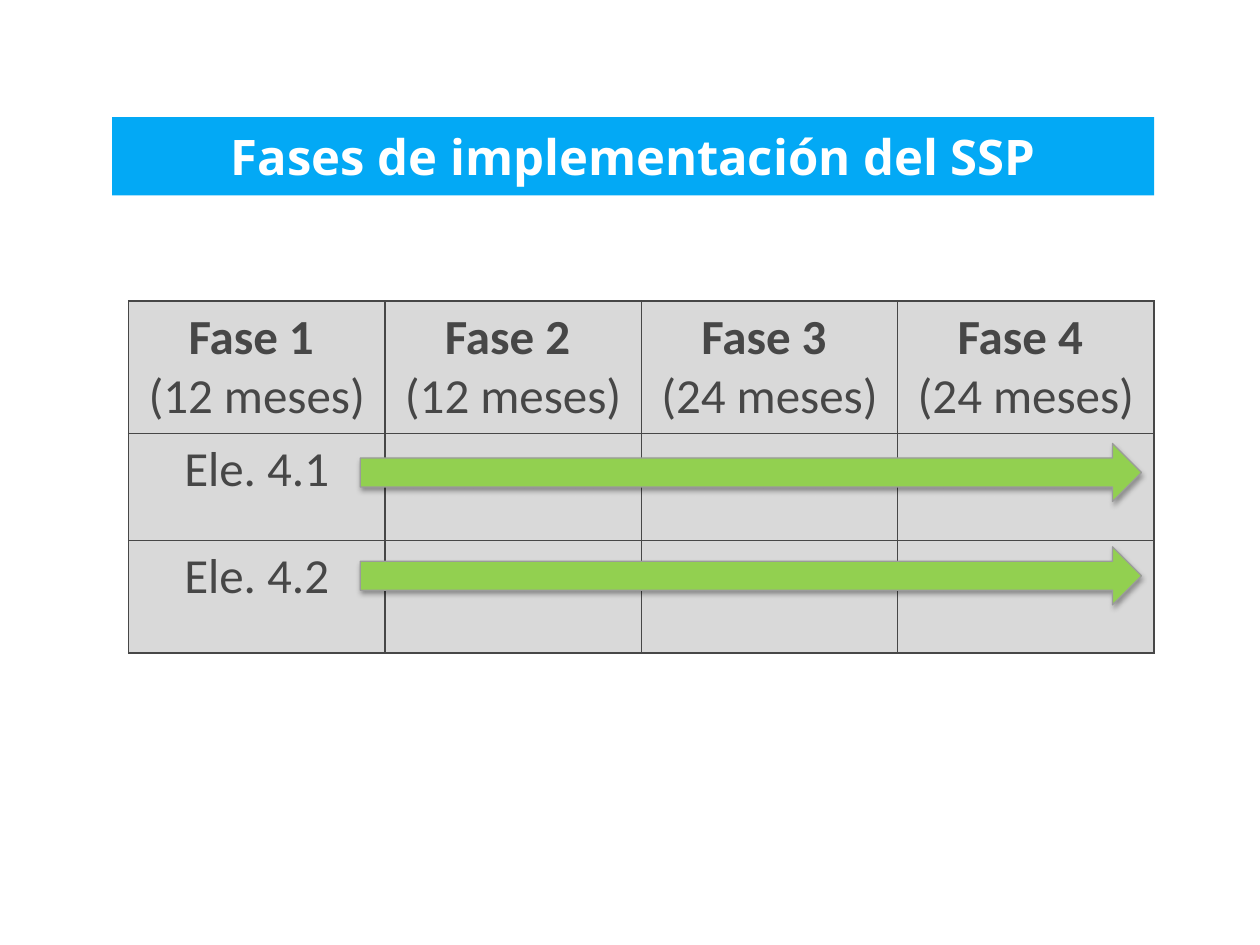
import pptx
import pptx.dml.color
import pptx.enum.shapes
import pptx.enum.text
import pptx.oxml
import pptx.oxml.ns
import pptx.util
from pptx.util import Inches

COLORS = {
    "banner": "03A9F5",
    "white": "FFFFFF",
    "text": "474747",
    "cell": "D9D9D9",
    "arrow": "92D050",
    "arrow_line": "9B9B9B",
    "shadow": "000000",
}
PHASES = [("Fase 1 ", 12), ("Fase 2 ", 12), ("Fase 3 ", 24), ("Fase 4 ", 24)]
ELEMENTS = ["Ele. 4.1", "Ele. 4.2"]
ROW_HEIGHTS = [1.02, 0.85, 0.89]
TABLE_WIDTH = 8.14
ARROW_TOPS = [3.52, 4.34]


def rgb(name):
    return pptx.dml.color.RGBColor.from_string(COLORS[name])


class SlideBuilder:
    def __init__(self, slide, size=28, font="Calibri"):
        self.slide = slide
        self.size = size
        self.font = font

    def add_text(self, paragraph, text, color="text", bold=False, font=None):
        paragraph.alignment = pptx.enum.text.PP_ALIGN.CENTER
        run = paragraph.add_run()
        run.text = text
        run.font.name = font or self.font
        run.font.size = pptx.util.Pt(self.size)
        run.font.bold = bold
        run.font.color.rgb = rgb(color)

    def shape(self, kind, left, top, width, height, fill):
        shape = self.slide.shapes.add_shape(
            kind, Inches(left), Inches(top), Inches(width), Inches(height))
        shape.shadow.inherit = False
        shape.fill.solid()
        shape.fill.fore_color.rgb = rgb(fill)
        return shape

    def banner(self, text, left, top, width, height):
        shape = self.shape(pptx.enum.shapes.MSO_SHAPE.RECTANGLE,
                           left, top, width, height, "banner")
        shape.line.fill.background()
        frame = shape.text_frame
        frame.word_wrap = True
        frame.vertical_anchor = pptx.enum.text.MSO_ANCHOR.MIDDLE
        self.add_text(frame.paragraphs[0], text, "white", True, "Open Sans")

    def arrow(self, left, top, width, height):
        shape = self.shape(pptx.enum.shapes.MSO_SHAPE.RIGHT_ARROW,
                           left, top, width, height, "arrow")
        shape.line.color.rgb = rgb("arrow_line")
        shape.line.width = pptx.util.Pt(0.75)
        effects = shape._element.spPr.find(pptx.oxml.ns.qn("a:effectLst"))
        effects.append(pptx.oxml.parse_xml(
            f'<a:outerShdw {pptx.oxml.ns.nsdecls("a")} '
            f'blurRad="{pptx.util.Pt(3.1)}" dist="{pptx.util.Pt(1.8)}" '
            'dir="5400000" rotWithShape="0">'
            f'<a:srgbClr val="{COLORS["shadow"]}"><a:alpha val="35000"/></a:srgbClr>'
            '</a:outerShdw>'))

    def style_cell(self, cell):
        properties = cell._tc.get_or_add_tcPr()
        for side in ("lnL", "lnR", "lnT", "lnB"):
            properties.append(pptx.oxml.parse_xml(
                f'<a:{side} {pptx.oxml.ns.nsdecls("a")} w="{pptx.util.Pt(1)}">'
                f'<a:solidFill><a:srgbClr val="{COLORS["text"]}"/></a:solidFill>'
                f'</a:{side}>'))
        cell.fill.solid()
        cell.fill.fore_color.rgb = rgb("cell")

    def phase_table(self, left, top):
        table = self.slide.shapes.add_table(
            len(ROW_HEIGHTS), len(PHASES), Inches(left), Inches(top),
            Inches(TABLE_WIDTH), Inches(sum(ROW_HEIGHTS))).table
        table.first_row = False
        table.horz_banding = False
        for row, height in zip(table.rows, ROW_HEIGHTS):
            row.height = Inches(height)
        for cell in table.iter_cells():
            self.style_cell(cell)
        for index, (phase, months) in enumerate(PHASES):
            frame = table.cell(0, index).text_frame
            self.add_text(frame.paragraphs[0], phase, bold=True)
            self.add_text(frame.add_paragraph(), f"({months} meses)")
        for index, element in enumerate(ELEMENTS, 1):
            self.add_text(table.cell(index, 0).text_frame.paragraphs[0], element)


def main():
    presentation = pptx.Presentation()
    presentation.slide_width = Inches(10)
    presentation.slide_height = Inches(7.5)
    slide = presentation.slides.add_slide(presentation.slide_layouts[6])
    builder = SlideBuilder(slide)
    builder.banner("Fases de implementación del SSP", 0.89, 0.93, 8.27, 0.62)
    builder.phase_table(1.02, 2.39)
    for top in ARROW_TOPS:
        builder.arrow(2.86, top, 6.2, 0.46)
    presentation.save("out.pptx")


if __name__ == "__main__":
    main()
